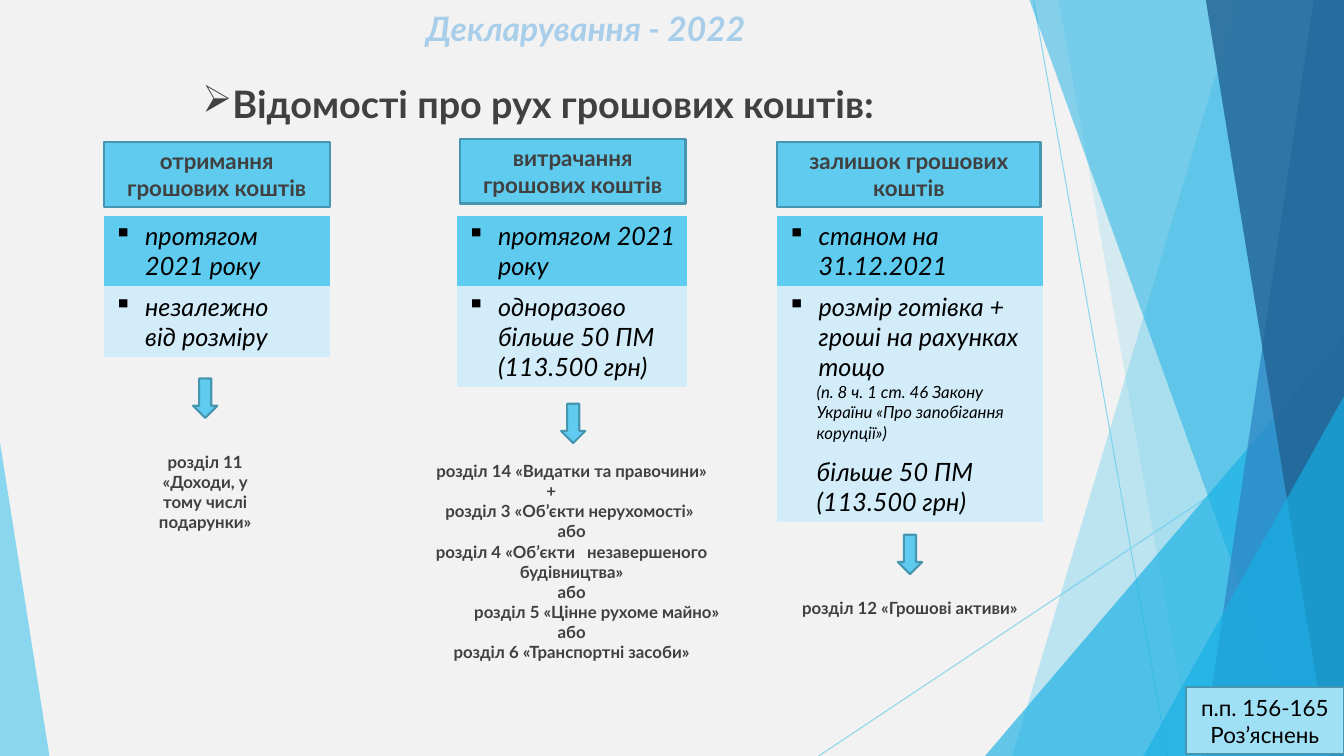
from dataclasses import dataclass

from lxml import etree
from pptx import Presentation
from pptx.dml.color import RGBColor
from pptx.enum.shapes import MSO_CONNECTOR, MSO_SHAPE
from pptx.enum.text import MSO_ANCHOR, PP_ALIGN
from pptx.oxml.ns import qn
from pptx.util import Emu, Pt

RECTANGLE, ARROW = MSO_SHAPE.RECTANGLE, MSO_SHAPE.RIGHT_ARROW
TRIANGLE, STRAIGHT = MSO_SHAPE.ISOSCELES_TRIANGLE, MSO_CONNECTOR.STRAIGHT
TOP, MIDDLE = MSO_ANCHOR.TOP, MSO_ANCHOR.MIDDLE
LEFT, CENTER = PP_ALIGN.LEFT, PP_ALIGN.CENTER
PX = 9144
WIDTH, HEIGHT = 1333, 750
ARROW_LENGTH, ARROW_BREADTH = 39, 24
PLAIN_TABLE = "{2D5ABB26-0587-4C30-8999-92F81FD0307C}"


@dataclass(frozen=True)
class Theme:
    font: str = "Lato"
    background: str = "F2F2F2"
    sky: str = "5FCBEF"
    azure: str = "17B0E4"
    blue: str = "2E83C3"
    navy: str = "226292"
    pale: str = "D2ECF9"
    badge: str = "9FE0F5"
    border: str = "4696B1"
    title: str = "A8CEEA"
    text: str = "404040"
    black: str = "000000"
    title_size: int = 24
    heading_size: int = 27
    cell_size: int = 18
    label_size: int = 16
    note_size: int = 12


THEME = Theme()


@dataclass(frozen=True)
class Box:
    left: int
    top: int
    width: int
    height: int

    def emu(self) -> tuple[Emu, ...]:
        return tuple(Emu(v * PX) for v in (self.left, self.top, self.width, self.height))


@dataclass(frozen=True)
class Facet:
    top_x: int
    bottom_x: int
    color: str
    alpha: int


@dataclass(frozen=True)
class Spike:
    box: Box
    apex: int
    color: str
    alpha: int


@dataclass(frozen=True)
class Line:
    text: str
    size: int
    color: str = THEME.black
    bold: bool = False
    italic: bool = False
    align: PP_ALIGN = LEFT
    bullet: str = ""
    margin: int = 0
    indent: int = 0
    before: int = 0
    tab: int = 0


@dataclass(frozen=True)
class Column:
    header: str
    header_box: Box
    table_box: Box
    period: str
    amount: list[Line]
    arrow_center: tuple[int, int]
    note_box: Box
    notes: list[str]


def item(text: str) -> Line:
    return Line(text, THEME.cell_size, italic=True, bullet="▪", margin=31, indent=-31)


def detail(text: str, size: int, before: int = 0) -> Line:
    return Line(text, size, italic=True, margin=29, before=before)


def label(text: str, size: int = THEME.label_size, tab: int = 0) -> Line:
    return Line(text, size, THEME.text, bold=True, align=CENTER, tab=tab)


FACETS = [
    Facet(1228, 1004, THEME.sky, 36),
    Facet(1050, 1183, THEME.sky, 20),
    Spike(Box(977, 333, 356, 417), 1, THEME.azure, 66),
    Facet(1021, 1291, THEME.azure, 50),
    Facet(1303, 1192, THEME.blue, 70),
    Facet(1196, 1318, THEME.navy, 80),
    Spike(Box(1134, 393, 199, 357), 1, THEME.azure, 66),
    Spike(Box(0, 439, 49, 311), 0, THEME.sky, 70),
]
RAYS = [(1025, 0, 1158, 750), (1333, 403, 812, 750)]
COLUMNS = [
    Column("отримання грошових коштів", Box(103, 141, 224, 64), Box(103, 214, 224, 140),
           "протягом 2021 року", [item("незалежно\vвід розміру")], (203, 395),
           Box(134, 443, 139, 91), ["розділ 11", "«Доходи, у тому числі подарунки»"]),
    Column("витрачання грошових коштів", Box(456, 138, 224, 64), Box(453, 214, 228, 170),
           "протягом 2021 року", [item("одноразово більше 50 ПМ (113.500 грн)")], (568, 420),
           Box(410, 452, 314, 212),
           ["розділ 14 «Видатки та правочини»", "+\t", "розділ 3 «Об’єкти нерухомості» ", "або",
            "розділ 4 «Об’єкти \tнезавершеного будівництва»", "або",
            "\tрозділ 5 «Цінне рухоме майно»", "або", "розділ 6 «Транспортні засоби»"]),
    Column("залишок грошових коштів", Box(771, 141, 261, 64), Box(771, 214, 263, 303),
           "станом на 31.12.2021",
           [item("розмір готівка + гроші на рахунках тощо"),
            detail("(п. 8 ч. 1 ст. 46 Закону України «Про запобігання корупції»)", THEME.note_size),
            detail("більше 50 ПМ (113.500 грн)", THEME.cell_size, before=10)],
           (902, 550), Box(783, 588, 239, 50), ["розділ 12 «Грошові активи»"]),
]


def rgb(color: str) -> RGBColor:
    return RGBColor.from_string(color)


def set_alpha(shape, percent: int) -> None:
    for color in shape._element.spPr.iter(qn("a:srgbClr")):
        etree.SubElement(color, qn("a:alpha"), val=str(percent * 1000))


def write(frame, lines: list[Line]) -> None:
    frame.word_wrap = True
    frame.text = "\n".join(line.text for line in lines)
    for paragraph, line in zip(frame.paragraphs, lines):
        paragraph.alignment = line.align
        paragraph.space_before = Pt(line.before)
        properties = paragraph._p.get_or_add_pPr()
        properties.set("marL", str(line.margin * PX))
        properties.set("indent", str(line.indent * PX))
        if line.bullet:
            etree.SubElement(properties, qn("a:buChar"), char=line.bullet)
        if line.tab:
            tabs = etree.SubElement(properties, qn("a:tabLst"))
            etree.SubElement(tabs, qn("a:tab"), pos=str(line.tab * PX), algn="l")
        for run in paragraph.runs:
            font = run.font
            font.name, font.size = THEME.font, Pt(line.size)
            font.bold, font.italic = line.bold, line.italic
            font.color.rgb = rgb(line.color)


def draw_ray(shapes, ends: tuple[int, int, int, int]) -> None:
    ray = shapes.add_connector(STRAIGHT, *(Emu(v * PX) for v in ends))
    ray.line.color.rgb = rgb(THEME.sky)
    ray.line.width = Pt(0.75)
    set_alpha(ray, 70)
    etree.SubElement(ray._element.spPr, qn("a:effectLst"))


def draw_facet(shapes, facet: Facet | Spike) -> None:
    if isinstance(facet, Spike):
        shape = shapes.add_shape(TRIANGLE, *facet.box.emu())
        shape.adjustments[0] = facet.apex
    else:
        outline = shapes.build_freeform(facet.top_x, 0, scale=PX)
        outline.add_line_segments([(WIDTH, 0), (WIDTH, HEIGHT), (facet.bottom_x, HEIGHT)])
        shape = outline.convert_to_shape()
    shape.shadow.inherit = False
    shape.fill.solid()
    shape.fill.fore_color.rgb = rgb(facet.color)
    shape.line.fill.background()
    set_alpha(shape, facet.alpha)


def draw_panel(shapes, kind: MSO_SHAPE, box: Box, fill: str, lines: list[Line]) -> None:
    panel = shapes.add_shape(kind, *box.emu())
    panel.shadow.inherit = False
    panel.fill.solid()
    panel.fill.fore_color.rgb = rgb(fill)
    panel.line.color.rgb = rgb(THEME.border)
    panel.line.width = Pt(1.5)
    panel.rotation = 90 if kind == ARROW else 0
    panel.text_frame.vertical_anchor = MIDDLE
    write(panel.text_frame, lines)


def draw_text(shapes, box: Box, lines: list[Line]) -> None:
    frame = shapes.add_textbox(*box.emu()).text_frame
    frame.vertical_anchor = TOP
    write(frame, lines)


def draw_column(shapes, column: Column) -> None:
    draw_panel(shapes, RECTANGLE, column.header_box, THEME.sky, [label(column.header)])
    table = shapes.add_table(2, 1, *column.table_box.emu()).table
    table.first_row = table.horz_banding = False
    table._tbl.tblPr.find(qn("a:tableStyleId")).text = PLAIN_TABLE
    heights = (70, column.table_box.height - 70)
    contents = ([item(column.period)], column.amount)
    for row, height, lines, fill in zip(table.rows, heights, contents, (THEME.sky, THEME.pale)):
        row.height = Emu(height * PX)
        cell = row.cells[0]
        cell.fill.solid()
        cell.fill.fore_color.rgb = rgb(fill)
        write(cell.text_frame, lines)
    x, y = column.arrow_center
    arrow_box = Box(x - ARROW_LENGTH // 2, y - ARROW_BREADTH // 2, ARROW_LENGTH, ARROW_BREADTH)
    draw_panel(shapes, ARROW, arrow_box, THEME.sky, [])
    draw_text(shapes, column.note_box, [label(note, THEME.note_size, 15) for note in column.notes])


def main() -> None:
    deck = Presentation()
    deck.slide_width, deck.slide_height = Emu(WIDTH * PX), Emu(HEIGHT * PX)
    slide = deck.slides.add_slide(deck.slide_layouts[6])
    slide.background.fill.solid()
    slide.background.fill.fore_color.rgb = rgb(THEME.background)
    shapes = slide.shapes
    for ray in RAYS:
        draw_ray(shapes, ray)
    for facet in FACETS:
        draw_facet(shapes, facet)
    draw_text(shapes, Box(220, 3, 722, 29),
              [Line("Декларування - 2022", THEME.title_size, THEME.title, True, True, CENTER)])
    draw_text(shapes, Box(141, 75, 954, 50),
              [Line("Відомості про рух грошових коштів:", THEME.heading_size, THEME.text,
                    bold=True, bullet="➢", margin=38, indent=12)])
    for column in COLUMNS:
        draw_column(shapes, column)
    draw_panel(shapes, RECTANGLE, Box(1176, 682, 157, 66), THEME.badge,
               [Line("п.п. 156-165 Роз’яснень", THEME.label_size, align=CENTER)])
    deck.save("out.pptx")


if __name__ == "__main__":
    main()
